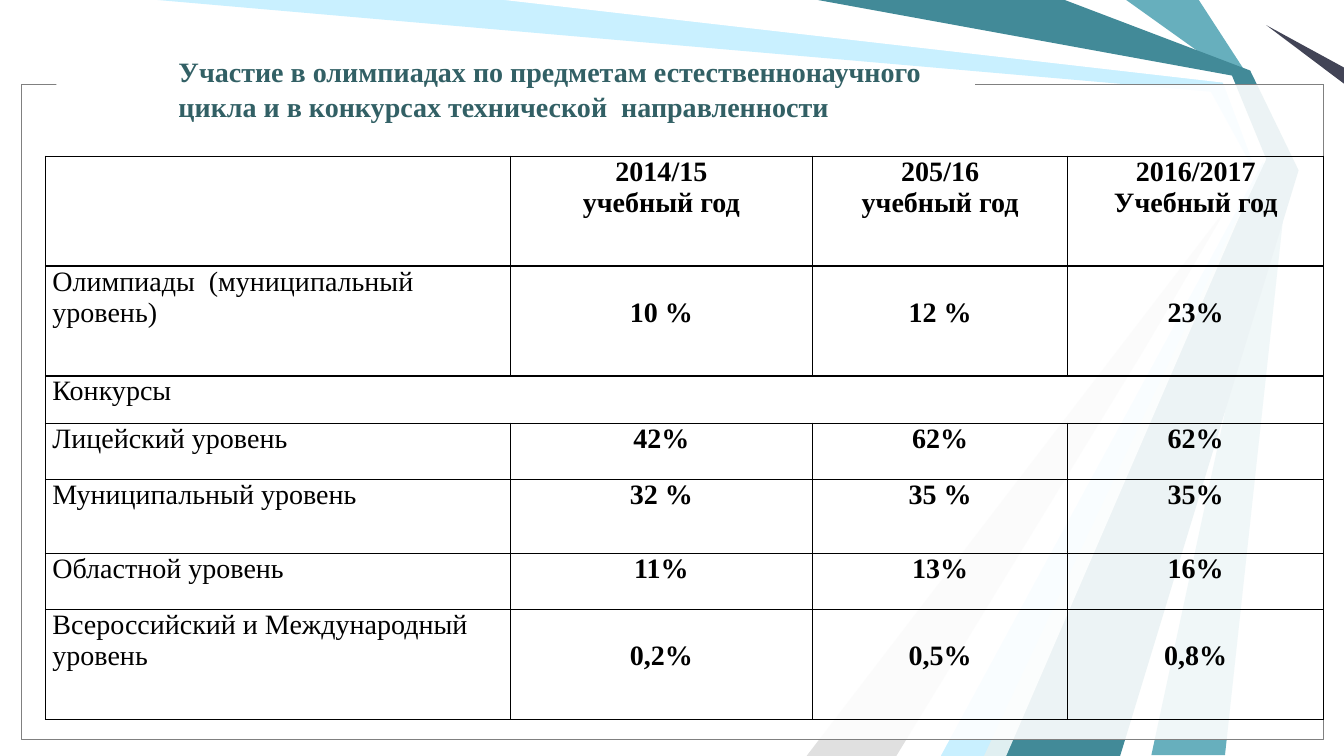
import pptx
import pptx.util
import pptx.dml.color
import pptx.enum.shapes
import pptx.enum.text
import pptx.oxml
import pptx.oxml.ns
import lxml.etree

Inches = pptx.util.Inches
Pt = pptx.util.Pt
RGBColor = pptx.dml.color.RGBColor
qn = pptx.oxml.ns.qn
LEFT = pptx.enum.text.PP_ALIGN.LEFT
CENTER = pptx.enum.text.PP_ALIGN.CENTER

BLACK = RGBColor(0x00, 0x00, 0x00)
WHITE = RGBColor(0xFF, 0xFF, 0xFF)
GREY = RGBColor(0x80, 0x80, 0x80)
LIGHT_GREY = RGBColor(0xE0, 0xE0, 0xE0)
BLUE = RGBColor(0x00, 0x84, 0xB4)
PALE_BLUE = RGBColor(0xC9, 0xF0, 0xFF)
SLATE = RGBColor(0x42, 0x44, 0x56)
TEAL = RGBColor(0x42, 0x8A, 0x98)
LIGHT_TEAL = RGBColor(0x67, 0xAF, 0xBD)
PALE_TEAL = RGBColor(0xE0, 0xEF, 0xF1)
DARK_TEAL = RGBColor(0x32, 0x60, 0x65)


def format_text(paragraph, alignment, bold, color):
    paragraph.alignment = alignment
    values = {"name": "Times New Roman", "size": Pt(20), "bold": bold}
    for name, value in values.items():
        setattr(paragraph.font, name, value)
    paragraph.font.color.rgb = color


def add_panel(left, top, width, height, line_color, opacity):
    shape = slide.shapes.add_shape(
        pptx.enum.shapes.MSO_SHAPE.RECTANGLE,
        Inches(left), Inches(top), Inches(width), Inches(height))
    shape.shadow.inherit = False
    shape.fill.solid()
    shape.fill.fore_color.rgb = WHITE
    color = shape._element.spPr.find(qn("a:solidFill"))[0]
    lxml.etree.SubElement(color, qn("a:alpha"), val=str(opacity * 1000))
    if line_color is None:
        shape.line.fill.background()
    else:
        shape.line.color.rgb = line_color
        shape.line.width = Pt(0.75)


presentation = pptx.Presentation()
presentation.slide_width = Inches(13.33)
presentation.slide_height = Inches(7.5)
slide = presentation.slides.add_slide(presentation.slide_layouts[5])

ribbons = [
    (LIGHT_TEAL, [(11.89, 0), (12.39, 0.77), (12.78, 1.67), (12.15, 7.49), (11.42, 7.49),
                  (12.67, 1.67), (12.22, 0.75), (11.17, 0)]),
    (PALE_BLUE, [(1.56, 0), (5.11, 0), (12.18, 0.78), (12.56, 1.69), (9.89, 7.5),
                 (9.22, 7.5), (12.46, 1.73), (12.01, 0.91)]),
    (LIGHT_GREY, [(8.89, 7.5), (12.36, 1.81), (8, 7.5)]),
    (WHITE, [(5, 0), (12.13, 0.82), (12.43, 1.62), (9, 7.5), (9.33, 7.5),
             (12.54, 1.58), (12.22, 0.75), (8, 0)]),
    (WHITE, [(12.33, 0), (12.22, 0.17), (13.04, 1.2), (13.33, 1.25), (13.33, 1),
             (12.33, 0.17), (12.43, 0)]),
    (SLATE, [(13.33, 0.83), (12.56, 0.25), (13.33, 0.67)]),
    (TEAL, [(8.11, 0), (10.56, 0), (12.4, 0.7), (12.88, 1.69), (11.11, 7.5),
            (9.78, 7.5), (12.56, 1.58), (12.22, 0.75)]),
    (PALE_TEAL, [(9.76, 7.5), (12.43, 1.83), (9.98, 7.5)]),
]
for color, points in ribbons:
    corners = [(Inches(x), Inches(y)) for x, y in points]
    builder = slide.shapes.build_freeform(*corners[0])
    builder.add_line_segments(corners[1:], close=True)
    ribbon = builder.convert_to_shape()
    ribbon.shadow.inherit = False
    ribbon.fill.solid()
    ribbon.fill.fore_color.rgb = color
    ribbon.line.fill.background()

for frame_color in (BLUE, GREY):
    add_panel(0.21, 0.84, 12.92, 6.5, frame_color, 69)
add_panel(0.56, 0.74, 9.11, 0.17, None, 100)

title = slide.shapes.title
title_place = {"left": 1.67, "top": 0.48, "width": 8.03, "height": 0.79}
for name, value in title_place.items():
    setattr(title, name, Inches(value))
title.text_frame.text = ("Участие в олимпиадах по предметам естественнонаучного "
                         "цикла и в конкурсах технической  направленности")
title.text_frame.word_wrap = True
title.text_frame.auto_size = pptx.enum.text.MSO_AUTO_SIZE.NONE
title.text_frame.vertical_anchor = pptx.enum.text.MSO_ANCHOR.MIDDLE
title.text_frame.paragraphs[0].line_spacing = 1.05
format_text(title.text_frame.paragraphs[0], LEFT, True, DARK_TEAL)
slide.shapes._spTree.append(title._element)

column_widths = [4.61, 3, 2.53, 2.54]
rows = [
    (1.09, 0, ["", "2014/15\nучебный год", "205/16\nучебный год", "2016/2017\nУчебный год"]),
    (1.09, 0.31, ["Олимпиады  (муниципальный уровень)", "10 %", "12 %", "23%"]),
    (0.47, 0, ["Конкурсы", "", "", ""]),
    (0.56, 0, ["Лицейский уровень", "42%", "62%", "62%"]),
    (0.73, 0, ["Муниципальный уровень", "32 %", "35 %", "35%"]),
    (0.56, 0, ["Областной уровень", "11%", "13%", "16%"]),
    (1.09, 0.31, ["Всероссийский и Международный уровень", "0,2%", "0,5%", "0,8%"]),
]
table = slide.shapes.add_table(
    len(rows), len(column_widths),
    Inches(0.45), Inches(1.55), Inches(12.68), Inches(5.59)).table
table.first_row = False
table.horz_banding = False
for column, width in zip(table.columns, column_widths):
    column.width = Inches(width)

for row_index, (height, value_offset, texts) in enumerate(rows):
    table.rows[row_index].height = Inches(height)
    for column_index, text in enumerate(texts):
        cell = table.cell(row_index, column_index)
        is_value = column_index > 0
        margins = {"left": 0.07, "right": 0.07, "bottom": 0,
                   "top": value_offset if is_value else 0}
        for side, margin in margins.items():
            setattr(cell, "margin_" + side, Inches(margin))
        cell.text = text
        for paragraph in cell.text_frame.paragraphs:
            format_text(paragraph, CENTER if is_value else LEFT, is_value, BLACK)
        properties = cell._tc.get_or_add_tcPr()
        for edge in ("lnL", "lnR", "lnT", "lnB"):
            border = lxml.etree.SubElement(properties, qn("a:" + edge), w=str(Pt(1)))
            border_fill = lxml.etree.SubElement(border, qn("a:solidFill"))
            lxml.etree.SubElement(border_fill, qn("a:srgbClr"), val=str(BLACK))
        cell.fill.background()

table.cell(2, 0).merge(table.cell(2, 3))

presentation.save("out.pptx")
